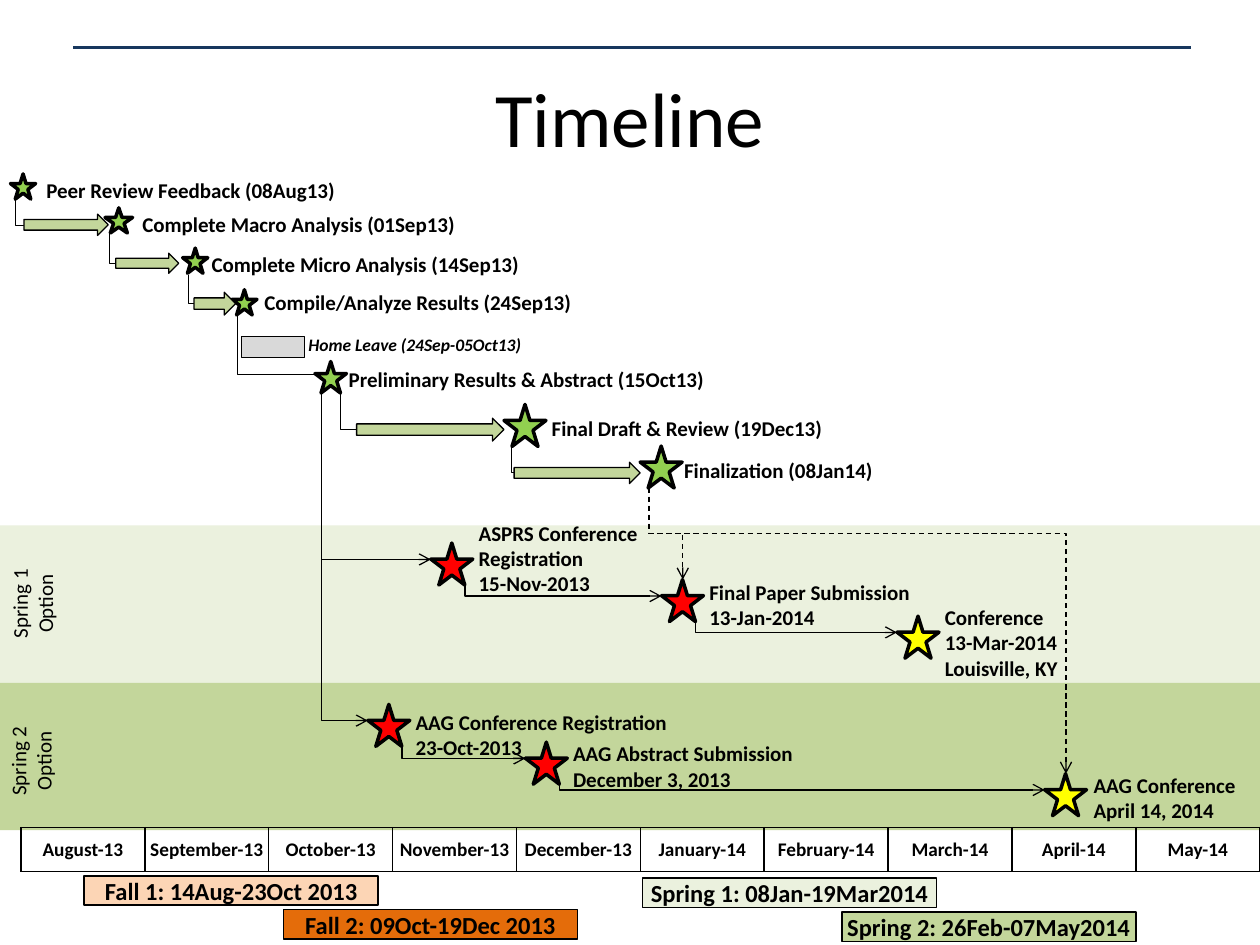
from lxml.etree import SubElement
from pptx import Presentation
from pptx.dml.color import RGBColor
from pptx.enum.dml import MSO_LINE
from pptx.enum.shapes import MSO_CONNECTOR, MSO_SHAPE
from pptx.enum.text import MSO_ANCHOR, PP_ALIGN
from pptx.oxml.ns import qn
from pptx.util import Pt

BLACK, GREEN, RED, YELLOW = "000000", "92D050", "FF0000", "FFFF00"
PALE, OLIVE = "EBF1DE", "C3D69B"


def tint(color, code):
    color.rgb = RGBColor.from_string(code)


class Board:
    """Draws styled timeline elements on one slide, with lengths in points."""

    def __init__(self, slide, font="Calibri"):
        self.slide = slide
        self.items = slide.shapes
        self.font = font

    def words(self, frame, lines, size=12, bold=True, italic=False, center=False):
        for i, line in enumerate(lines):
            para = frame.add_paragraph() if i else frame.paragraphs[0]
            para.alignment = PP_ALIGN.CENTER if center else PP_ALIGN.LEFT
            run = para.add_run()
            run.text = line
            font = run.font
            font.name, font.size = self.font, Pt(size)
            font.bold, font.italic = bold, italic
            tint(font.color, BLACK)

    def shape(self, kind, box, fill, width=0):
        item = self.items.add_shape(kind, *map(Pt, box))
        item.shadow.inherit = False
        item.fill.solid()
        tint(item.fill.fore_color, fill)
        if width:
            tint(item.line.color, BLACK)
            item.line.width = Pt(width)
        else:
            item.line.fill.background()
        return item

    def label(self, x, y, width, lines, size=12, turn=0, **style):
        height = 7.2 + 1.2 * size * len(lines)
        item = self.items.add_textbox(Pt(x), Pt(y), Pt(width), Pt(height))
        item.rotation = turn
        item.text_frame.word_wrap = len(lines) == 1
        self.words(item.text_frame, lines, size, **style)

    def term(self, x, y, fill, text):
        item = self.shape(MSO_SHAPE.RECTANGLE, (x, y, 168, 16.8), fill, 1)
        frame = item.text_frame
        frame.margin_left = frame.margin_right = 0
        frame.margin_top = frame.margin_bottom = 0
        frame.vertical_anchor = MSO_ANCHOR.MIDDLE
        frame.word_wrap = False
        self.words(frame, [text], 14, center=True)

    def line(self, kind, ends, color, width, dash=False, head=False):
        item = self.items.add_connector(kind, *map(Pt, ends))
        tint(item.line.color, color)
        item.line.width = Pt(width)
        if dash:
            item.line.dash_style = MSO_LINE.DASH
        props = item.element.spPr
        if head:
            SubElement(props.find(qn("a:ln")), qn("a:tailEnd"), type="arrow")
        SubElement(props, qn("a:effectLst"))
        return props

    def elbow(self, x1, y1, x2, y2, width=0.75, head=False, bend=None):
        mid_x, mid_y = (x1 + x2) / 2, (y1 + y2) / 2
        half_w, half_h = (y2 - y1) / 2, (x2 - x1) / 2
        ends = mid_x + half_w, mid_y - half_h, mid_x - half_w, mid_y + half_h
        props = self.line(MSO_CONNECTOR.ELBOW, ends, BLACK, width, bend is not None, head)
        props.find(qn("a:xfrm")).set("rot", "16200000")
        geom = props.find(qn("a:prstGeom"))
        if bend is None:
            geom.set("prst", "bentConnector2")
        else:
            SubElement(geom.find(qn("a:avLst")), qn("a:gd"),
                       name="adj1", fmla=f"val {round(bend * 100000)}")

    def months(self, box, names):
        table = self.items.add_table(1, len(names), *map(Pt, box)).table
        for i, name in enumerate(names):
            table.columns[i].width = Pt(box[2] / len(names))
            cell = table.cell(0, i)
            cell.margin_left = cell.margin_right = cell.margin_top = Pt(0.72)
            cell.margin_bottom = 0
            cell.vertical_anchor = MSO_ANCHOR.MIDDLE
            self.words(cell.text_frame, [name], 11, center=True)
            props = cell._tc.get_or_add_tcPr()
            for side in ("lnL", "lnR", "lnT", "lnB"):
                edge = SubElement(props, qn(f"a:{side}"), w=str(Pt(1)))
                SubElement(SubElement(edge, qn("a:solidFill")), qn("a:srgbClr"), val=BLACK)
            cell.fill.background()


TERMS = [
    (48.2, 500.4, "FCD5B5", "Fall 1: 14Aug-23Oct 2013"),
    (162, 519.8, "E46C0A", "Fall 2: 09Oct-19Dec 2013"),
    (367.2, 501.8, PALE, "Spring 1: 08Jan-19Mar2014"),
    (481, 521.3, OLIVE, "Spring 2: 26Feb-07May2014"),
]
BANDS = [
    (300.2, 90, PALE, "Spring 1", -8.6, 326.9),
    (390.2, 84.2, OLIVE, "Spring 2", -9.4, 416.9),
]
GOALS = [
    ((6, 99.4, 14.4, 14.4), GREEN, (19.4, 97.9, 202), ["Peer Review Feedback (08Aug13)"]),
    ((60, 118.8, 15.8, 14.4), GREEN, (74.2, 117.4, 267), ["Complete Macro Analysis (01Sep13)"]),
    ((104.4, 141.8, 14.4, 14.4), GREEN, (113.8, 140.4, 202), ["Complete Micro Analysis (14Sep13)"]),
    ((132.5, 165.6, 14.4, 14.4), GREEN, (144, 162, 202), ["Compile/Analyze Results (24Sep13)"]),
    ((180, 206.6, 18, 18), GREEN, (192.2, 205.9, 232), ["Preliminary Results & Abstract (15Oct13)"]),
    ((288, 231.1, 24, 24), GREEN, (308.2, 234, 202), ["Final Draft & Review (19Dec13)"]),
    ((365.8, 254.9, 24, 24), GREEN, (383.8, 257.8, 202), ["Finalization (08Jan14)"]),
    ((246.2, 310.3, 24, 24), RED, (266.4, 293.8, 108.7), ["ASPRS Conference", "Registration", "15-Nov-2013"]),
    ((378, 331.2, 24, 24), RED, (398.2, 327.6, 130.3), ["Final Paper Submission", "13-Jan-2014"]),
    ((512.6, 352.1, 24, 24), YELLOW, (532.8, 342, 79.9), ["Conference", "13-Mar-2014", "Louisville, KY"]),
    ((210.2, 402.5, 24, 24), RED, (230.4, 401.8, 162.7), ["AAG Conference Registration", "23-Oct-2013"]),
    ((300.2, 424.1, 24, 24), RED, (320.4, 419.8, 141.8), ["AAG Abstract Submission", "December 3, 2013"]),
    ((596.9, 442.1, 24, 24), YELLOW, (617.8, 437.8, 96.5), ["AAG Conference", "April 14, 2014"]),
]
TASKS = [
    (13.7, 122.4, 48.2, 12.2), (66.2, 144.7, 36, 11.5), (110.9, 167, 23.8, 13),
    (203.8, 239, 84.2, 13), (293.8, 264.2, 72, 12.2),
]
THIN = [
    (8.6, 113.8, 13.7, 128.9), (62.6, 133.9, 66.2, 150.5),
    (107.3, 157, 110.9, 173.5), (135.4, 180, 180, 213.8),
]
PLAIN = [(194.4, 224.6, 203.8, 245.5), (292.3, 254.9, 293.8, 270)]
HEADED = [
    (265.7, 334.1, 378, 340.6), (397.4, 355, 512.6, 361.4),
    (183.6, 224.6, 246.2, 319.7), (229.7, 426.2, 300.2, 433.4),
    (319.7, 447.8, 596.9, 451.4), (183.6, 224.6, 210.2, 411.8),
]
DASHED = [(390.2, 331.2, 0.5), (609.1, 442.1, 0.16)]
MONTHS = ["August-13", "September-13", "October-13", "November-13", "December-13",
          "January-14", "February-14", "March-14", "April-14", "May-14"]


def main():
    deck = Presentation()
    deck.slide_width, deck.slide_height = Pt(720), Pt(540)
    board = Board(deck.slides.add_slide(deck.slide_layouts[6]))
    board.line(MSO_CONNECTOR.STRAIGHT, (42, 27, 680.4, 27), "17375E", 1.5)
    board.label(36, 36.6, 648, ["Timeline"], 44, bold=False, center=True)
    for term in TERMS:
        board.term(*term)
    for top, height, fill, name, x, y in BANDS:
        board.shape(MSO_SHAPE.RECTANGLE, (0, top, 720, height), fill)
        board.label(x, y, 54, [name, "Option"], turn=270, bold=False, center=True)
    for star, fill, place, lines in GOALS:
        board.shape(MSO_SHAPE.STAR_5_POINT, star, fill, 2)
        board.label(*place, lines)
    board.shape(MSO_SHAPE.RECTANGLE, (138.2, 192.2, 36, 12.2), "D9D9D9", 0.75)
    board.label(169.2, 187.2, 208.8, ["Home Leave (24Sep-05Oct13)"], 10, italic=True)
    for ends in THIN:
        board.elbow(*ends, width=0.25)
    for ends in PLAIN:
        board.elbow(*ends)
    for ends in HEADED:
        board.elbow(*ends, head=True)
    for x, y, bend in DASHED:
        board.elbow(370.8, 278.6, x, y, head=True, bend=bend)
    for box in TASKS:
        board.shape(MSO_SHAPE.RIGHT_ARROW, box, OLIVE, 0.75)
    board.months((12, 473, 708, 25), MONTHS)
    deck.save("out.pptx")


if __name__ == "__main__":
    main()
